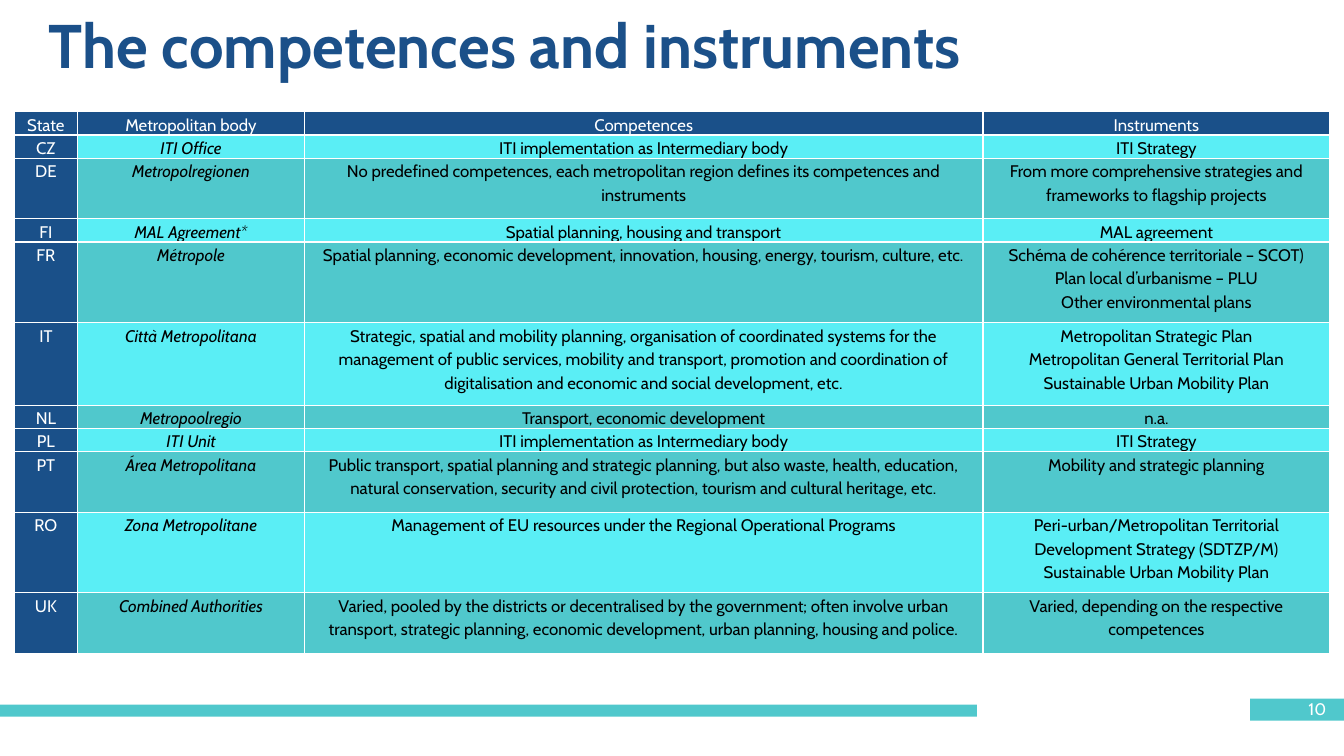
from lxml import etree
from pptx import Presentation
from pptx.dml.color import RGBColor
from pptx.enum.shapes import MSO_SHAPE
from pptx.enum.text import MSO_ANCHOR, MSO_AUTO_SIZE, PP_ALIGN
from pptx.oxml.ns import qn
from pptx.util import Inches, Pt

RECTANGLE = MSO_SHAPE.RECTANGLE
LEFT, CENTER = PP_ALIGN.LEFT, PP_ALIGN.CENTER
TOP, MIDDLE = MSO_ANCHOR.TOP, MSO_ANCHOR.MIDDLE
GROW, FIXED = MSO_AUTO_SIZE.SHAPE_TO_FIT_TEXT, MSO_AUTO_SIZE.NONE

THEME = {
    "font": "Cabin",
    "title": "1B5089", "navy": "1A5089", "teal": "50C8CC", "aqua": "5AEEF5",
    "white": "FFFFFF", "black": "000000",
    "title_size": 44, "body_size": 12,
}

# Table content: row height in units, then the four cells
ROW_UNIT = 0.2
COLUMN_WIDTHS = [0.63, 2.25, 6.73, 3.44]
ROWS = [
    (1, "State", "Metropolitan body", "Competences", "Instruments"),
    (1, "CZ", "ITI Office", "ITI implementation as Intermediary body", "ITI Strategy"),
    (3, "DE", "Metropolregionen",
     "No predefined competences, each metropolitan region defines its competences and instruments",
     "From more comprehensive strategies and frameworks to flagship projects"),
    (1, "FI", "MAL Agreement*", "Spatial planning, housing and transport", "MAL agreement"),
    (4, "FR", "Métropole",
     "Spatial planning, economic development, innovation, housing, energy, tourism, culture, etc.",
     "Schéma de cohérence territoriale – SCOT)\nPlan local d’urbanisme – PLU\n"
     "Other environmental plans"),
    (4.1, "IT", "Città Metropolitana",
     "Strategic, spatial and mobility planning, organisation of coordinated systems for the "
     "management of public services, mobility and transport, promotion and coordination of "
     "digitalisation and economic and social development, etc.",
     "Metropolitan Strategic Plan\nMetropolitan General Territorial Plan\n"
     "Sustainable Urban Mobility Plan"),
    (1, "NL", "Metropoolregio", "Transport, economic development", "n.a."),
    (1, "PL", "ITI Unit", "ITI implementation as Intermediary body", "ITI Strategy"),
    (3, "PT", "Área Metropolitana",
     "Public transport, spatial planning and strategic planning, but also waste, health, "
     "education, natural conservation, security and civil protection, tourism and cultural "
     "heritage, etc.",
     "Mobility and strategic planning"),
    (4, "RO", "Zona Metropolitane",
     "Management of EU resources under the Regional Operational Programs",
     "Peri-urban/Metropolitan Territorial Development Strategy (SDTZP/M)\n"
     "Sustainable Urban Mobility Plan"),
    (3, "UK", "Combined Authorities",
     "Varied, pooled by the districts or decentralised by the government; often involve urban "
     "transport, strategic planning, economic development, urban planning, housing and police.",
     "Varied, depending on the respective competences"),
]


def write(frame, text, size=THEME["body_size"], color="white", bold=False, italic=False,
          align=CENTER, spacing=1.0):
    frame.text = text
    for paragraph in frame.paragraphs:
        paragraph.alignment = align
        paragraph.line_spacing = spacing
        for run in paragraph.runs:
            font = run.font
            font.name, font.size = THEME["font"], Pt(size)
            font.bold, font.italic = bold, italic
            font.color.rgb = RGBColor.from_string(THEME[color])


def add_borders(cell, color, points):
    properties = cell._tc.get_or_add_tcPr()
    for side in ("lnL", "lnR", "lnT", "lnB"):
        line = etree.SubElement(properties, qn(f"a:{side}"), w=str(Pt(points)))
        solid = etree.SubElement(line, qn("a:solidFill"))
        etree.SubElement(solid, qn("a:srgbClr"), val=color)


deck = Presentation()
deck.slide_width, deck.slide_height = Inches(13.33), Inches(7.5)
slide = deck.slides.add_slide(deck.slide_layouts[6])

# Footer bars
for bar_place in [(-0.1, 6.99, 9.79, 0.12), (12.4, 6.93, 0.94, 0.22)]:
    bar = slide.shapes.add_shape(RECTANGLE, *map(Inches, bar_place))
    bar.shadow.inherit = False
    bar.fill.solid()
    bar.fill.fore_color.rgb = RGBColor.from_string(THEME["teal"])
    bar.line.fill.background()

# Page number and title; the narrow number box has no side margins
for place, wrap, fit, anchor, side_margin, text, style in [
    ((12.94, 6.88, 0.25, 0.38), False, GROW, TOP, 0, "10", {}),
    ((0.43, -0.12, 12.47, 1.2), True, FIXED, MIDDLE, 0.05, "The competences and instruments",
     {"size": THEME["title_size"], "color": "title", "bold": True, "align": LEFT,
      "spacing": 0.9}),
]:
    frame = slide.shapes.add_textbox(*map(Inches, place)).text_frame
    frame.word_wrap, frame.auto_size, frame.vertical_anchor = wrap, fit, anchor
    frame.margin_left = frame.margin_right = Inches(side_margin)
    frame.margin_top = frame.margin_bottom = Inches(0.05)
    write(frame, text, **style)

# Table of metropolitan bodies: navy header and first column, alternating row bands
table_height = ROW_UNIT * sum(row[0] for row in ROWS)
competences = slide.shapes.add_table(
    len(ROWS), len(COLUMN_WIDTHS), Inches(0.14), Inches(1.11),
    Inches(sum(COLUMN_WIDTHS)), Inches(table_height)).table
competences.first_row = competences.horz_banding = False
for column, width in zip(competences.columns, COLUMN_WIDTHS):
    column.width = Inches(width)

for r, (units, *texts) in enumerate(ROWS):
    competences.rows[r].height = Inches(units * ROW_UNIT)
    band = "aqua" if r % 2 else "teal"
    for c, text in enumerate(texts):
        heading = r == 0 or c == 0
        cell = competences.cell(r, c)
        cell.margin_left = cell.margin_right = Inches(0.06)
        cell.margin_top = cell.margin_bottom = 0
        add_borders(cell, THEME["white"], 1)
        cell.fill.solid()
        cell.fill.fore_color.rgb = RGBColor.from_string(THEME["navy" if heading else band])
        write(cell.text_frame, text, color="white" if heading else "black",
              italic=c == 1 and not heading, spacing=1.15)

deck.save("out.pptx")
